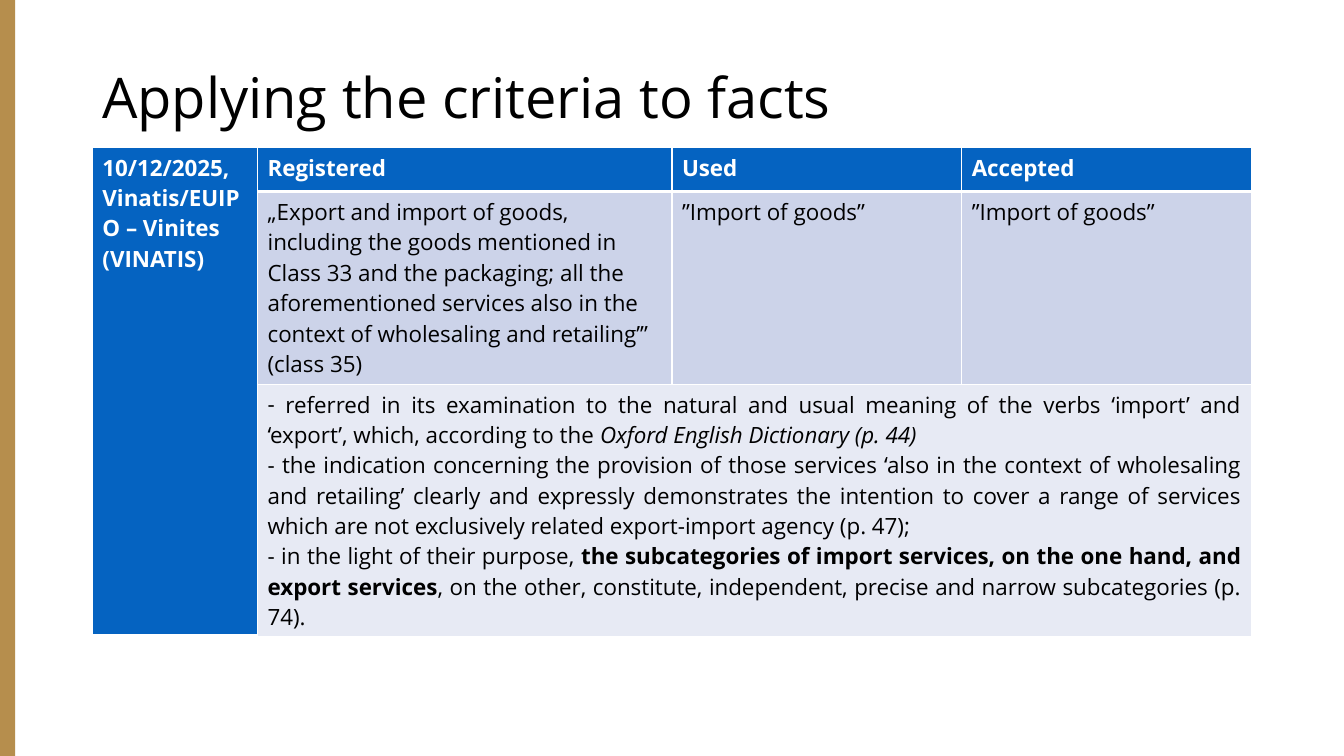
import pptx
import pptx.util
import pptx.dml.color
import pptx.enum.shapes
import pptx.enum.text
import pptx.oxml
import pptx.oxml.ns

Pt = pptx.util.Pt
ANCHOR = pptx.enum.text.MSO_ANCHOR
ALIGN = pptx.enum.text.PP_ALIGN
BLUE, LAVENDER, PALE = "0563C1", "CCD3E9", "E7EAF4"
NS = pptx.oxml.ns.nsdecls("a")


def color(hex_string):
    return pptx.dml.color.RGBColor.from_string(hex_string)


def add_text(paragraph, text, **formats):
    run = paragraph.add_run()
    run.text = text
    ink = formats.pop("ink", "000000")
    for name, value in {"name": "Open Sans", "size": Pt(16), **formats}.items():
        setattr(run.font, name, value)
    run.font.color.rgb = color(ink)


presentation = pptx.Presentation()
presentation.slide_width, presentation.slide_height = Pt(960), Pt(540)
slide = presentation.slides.add_slide(presentation.slide_layouts[6])

# Gold band on the left edge
band = slide.shapes.add_shape(
    pptx.enum.shapes.MSO_SHAPE.RECTANGLE, Pt(0), Pt(0), Pt(10.8), Pt(540))
band.shadow.inherit = False
band.fill.solid()
band.fill.fore_color.rgb = color("B68E4D")
band.line.fill.background()

# Title
title = slide.shapes.add_textbox(Pt(66), Pt(28.75), Pt(828), Pt(85.5)).text_frame
title.word_wrap = True
title.vertical_anchor = ANCHOR.MIDDLE
title.paragraphs[0].line_spacing = 0.9
add_text(title.paragraphs[0], "Applying the criteria to facts", size=Pt(40))

# Table grid, rows tall enough for six and eight lines of text
row_heights = (31.7, 137.5, 180)
case_table = slide.shapes.add_table(
    3, 4, Pt(66), Pt(105.2), Pt(828), Pt(sum(row_heights))).table
for column, width in zip(case_table.columns, (118, 296, 207, 207)):
    column.width = Pt(width)
for row, height in zip(case_table.rows, row_heights):
    row.height = Pt(height)
case_table.cell(0, 0).merge(case_table.cell(2, 0))
case_table.cell(2, 1).merge(case_table.cell(2, 3))

# Fills and white borders, heavier under the header
for r, row_fill in enumerate((BLUE, LAVENDER, PALE)):
    for c in range(4):
        cell = case_table.cell(r, c)
        cell.fill.solid()
        cell.fill.fore_color.rgb = color(BLUE if c == 0 else row_fill)
        properties = cell._tc.get_or_add_tcPr()
        for position, side in enumerate("LRTB"):
            weight = Pt(3 if r == 0 and side == "B" else 1)
            properties.insert(position, pptx.oxml.parse_xml(
                f'<a:ln{side} {NS} w="{weight}"><a:solidFill>'
                f'<a:srgbClr val="FFFFFF"/></a:solidFill></a:ln{side}>'))

# Header and wording of the registration
rows = [
    ["10/12/2025, Vinatis/EUIPO – Vinites (VINATIS)", "Registered", "Used", "Accepted"],
    ["", "„Export and import of goods, including the goods mentioned in Class 33 and "
     "the packaging; all the aforementioned services also in the context of "
     "wholesaling and retailing’” (class 35)", "”Import of goods”", "”Import of goods”"],
]
for r, texts in enumerate(rows):
    for c, text in enumerate(texts):
        if text:
            add_text(case_table.cell(r, c).text_frame.paragraphs[0], text,
                     bold=r == 0, ink="000000" if r else "FFFFFF")

# Findings
findings = [
    [(" referred in its examination to the natural and usual meaning of the verbs "
      "‘import’ and ‘export’, which, according to the ", {}),
     ("Oxford English Dictionary (p. 44)", {"italic": True})],
    [(" the indication concerning the provision of those services ‘also in the context "
      "of wholesaling and retailing’ clearly and expressly demonstrates the intention to "
      "cover a range of services which are not exclusively related export-import agency "
      "(p. 47);", {})],
    [(" in the light of their purpose, ", {}),
     ("the subcategories of import services, on the one hand, and export services",
      {"bold": True}),
     (", on the other, constitute, independent, precise and narrow subcategories "
      "(p. 74).", {})],
]
findings_frame = case_table.cell(2, 1).text_frame
for number, finding in enumerate(findings):
    paragraph = findings_frame.add_paragraph() if number else findings_frame.paragraphs[0]
    paragraph.alignment = ALIGN.JUSTIFY
    for bullet in ('buFont {} typeface="Open Sans"', 'buChar {} char="-"'):
        paragraph._p.get_or_add_pPr().append(
            pptx.oxml.parse_xml(f"<a:{bullet.format(NS)}/>"))
    for text, formats in finding:
        add_text(paragraph, text, **formats)

presentation.save("out.pptx")
